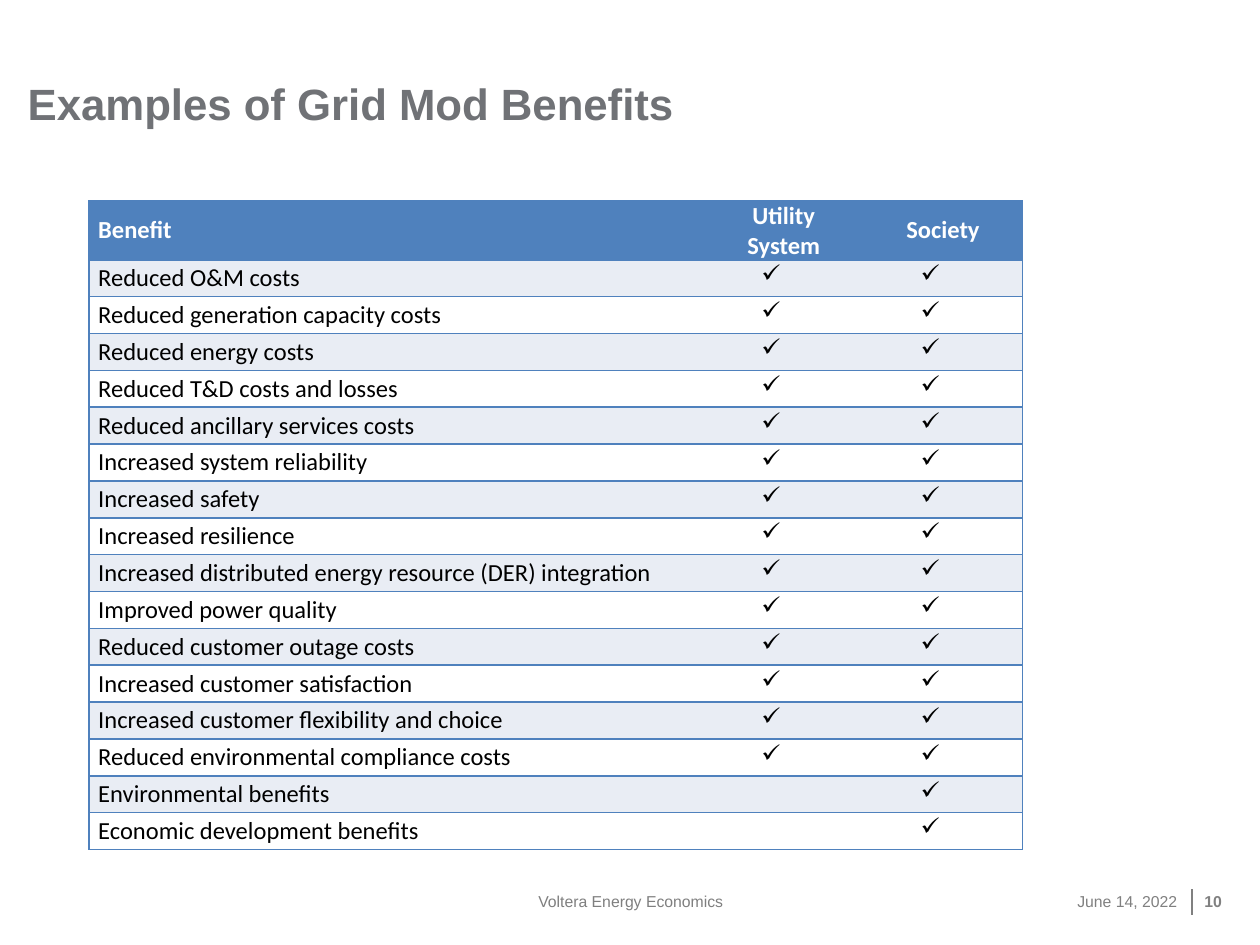
import pptx
import pptx.util
import pptx.dml.color
import pptx.enum.shapes
import pptx.enum.text
import pptx.oxml.ns
import lxml.etree

Cm, Pt = pptx.util.Cm, pptx.util.Pt
ALIGN = pptx.enum.text.PP_ALIGN
ANCHOR = pptx.enum.text.MSO_ANCHOR
COLORS = {"title": "707276", "footer": "808080", "center": "7F7F7F", "blue": "4F81BD",
          "band": "E9EDF4", "white": "FFFFFF", "black": "000000"}
CHECK = "✓"
HEADINGS = ("Benefit", "Utility System", "Society")
SHARED_BENEFITS = (
    "Reduced O&M costs", "Reduced generation capacity costs", "Reduced energy costs",
    "Reduced T&D costs and losses", "Reduced ancillary services costs",
    "Increased system reliability", "Increased safety", "Increased resilience",
    "Increased distributed energy resource (DER) integration", "Improved power quality",
    "Reduced customer outage costs", "Increased customer satisfaction",
    "Increased customer flexibility and choice", "Reduced environmental compliance costs")
SOCIETY_BENEFITS = ("Environmental benefits", "Economic development benefits")


class SlideBuilder:
    """Holds the style and the current slide, and adds elements to it."""

    def __init__(self, slide):
        self.slide = slide

    def color(self, name):
        return pptx.dml.color.RGBColor.from_string(COLORS[name])

    def style(self, paragraph, size, color, bold, align, font="Arial"):
        paragraph.alignment = align
        paragraph.font.name = font
        paragraph.font.size = Pt(size)
        paragraph.font.bold = bold
        paragraph.font.color.rgb = self.color(color)

    def text(self, box, wording, size, color, bold=False, align=ALIGN.LEFT,
             anchor=ANCHOR.MIDDLE):
        frame = self.slide.shapes.add_textbox(*map(Cm, box)).text_frame
        frame.word_wrap = True
        frame.vertical_anchor = anchor
        frame.margin_left = frame.margin_right = frame.margin_top = frame.margin_bottom = 0
        frame.text = wording
        self.style(frame.paragraphs[0], size, color, bold, align)

    def line(self, x1, y1, x2, y2, color):
        connector = self.slide.shapes.add_connector(
            pptx.enum.shapes.MSO_CONNECTOR.STRAIGHT, Cm(x1), Cm(y1), Cm(x2), Cm(y2))
        connector.line.color.rgb = self.color(color)
        connector.line.width = Pt(1)
        properties = connector._element.spPr
        lxml.etree.SubElement(properties, pptx.oxml.ns.qn("a:effectLst"))

    def borders(self, cell, sides):
        qn = pptx.oxml.ns.qn
        properties = cell._tc.get_or_add_tcPr()
        for side in "LRTB":
            edge = lxml.etree.SubElement(properties, qn(f"a:ln{side}"), w=str(Pt(1)))
            if side in sides:
                fill = lxml.etree.SubElement(edge, qn("a:solidFill"))
                lxml.etree.SubElement(fill, qn("a:srgbClr"), val=COLORS["blue"])
            else:
                lxml.etree.SubElement(edge, qn("a:noFill"))

    def bullet(self, paragraph, symbol, indent):
        properties = paragraph._p.get_or_add_pPr()
        properties.set("marL", str(Cm(indent)))
        properties.set("indent", str(-Cm(indent)))
        lxml.etree.SubElement(properties, pptx.oxml.ns.qn("a:buChar"), char=symbol)

    def cell(self, cell, wording, fill, color, bold, column):
        self.borders(cell, ("LTB", "TB", "RTB")[column])
        cell.fill.solid()
        cell.fill.fore_color.rgb = self.color(fill)
        cell.vertical_anchor = ANCHOR.MIDDLE
        cell.margin_left = cell.margin_right = Cm(0.19)
        cell.margin_top = cell.margin_bottom = 0
        checked = wording == CHECK
        cell.text = " " if checked else wording
        paragraph = cell.text_frame.paragraphs[0]
        paragraph.space_before = Pt(0)
        paragraph.space_after = Pt(1)
        if checked:
            self.bullet(paragraph, CHECK, 0.79)
        self.style(paragraph, 14, color, bold, ALIGN.CENTER if column else ALIGN.LEFT, "Calibri")

    def table(self, left, top, widths, height, header_height, rows):
        row_height = (height - header_height) / (len(rows) - 1)
        table = self.slide.shapes.add_table(
            len(rows), len(widths), Cm(left), Cm(top), Cm(sum(widths)), Cm(height)).table
        table.first_row = table.horz_banding = False
        for column, width in zip(table.columns, widths):
            column.width = Cm(width)
        for index, values in enumerate(rows):
            header = index == 0
            table.rows[index].height = Cm(header_height if header else row_height)
            fill = "blue" if header else "band" if index % 2 else "white"
            color = "white" if header else "black"
            for column, wording in enumerate(values):
                self.cell(table.cell(index, column), wording, fill, color, header, column)


def main():
    presentation = pptx.Presentation()
    presentation.slide_width, presentation.slide_height = Cm(25.4), Cm(19.05)
    builder = SlideBuilder(presentation.slides.add_slide(presentation.slide_layouts[6]))

    builder.text((0.56, 0.76, 21, 1.85), "Examples of Grid Mod Benefits", 25, "title",
                 bold=True, anchor=ANCHOR.BOTTOM)
    rows = [HEADINGS]
    rows += [(benefit, CHECK, CHECK) for benefit in SHARED_BENEFITS]
    rows += [(benefit, "", CHECK) for benefit in SOCIETY_BENEFITS]
    builder.table(1.79, 4.05, (12.4, 3.22, 3.2), 12.99, 1.09, rows)

    builder.text((8.69, 17.66, 8.05, 1.02), "Voltera Energy Economics", 9, "center",
                 align=ALIGN.CENTER)
    builder.text((20.4, 17.66, 3.33, 1.02), "June 14, 2022", 9, "footer", align=ALIGN.RIGHT)
    builder.line(24.03, 17.93, 24.03, 18.44, "footer")
    builder.text((24.28, 17.66, 0.64, 1.02), "10", 9, "footer", bold=True)
    presentation.save("out.pptx")


if __name__ == "__main__":
    main()
